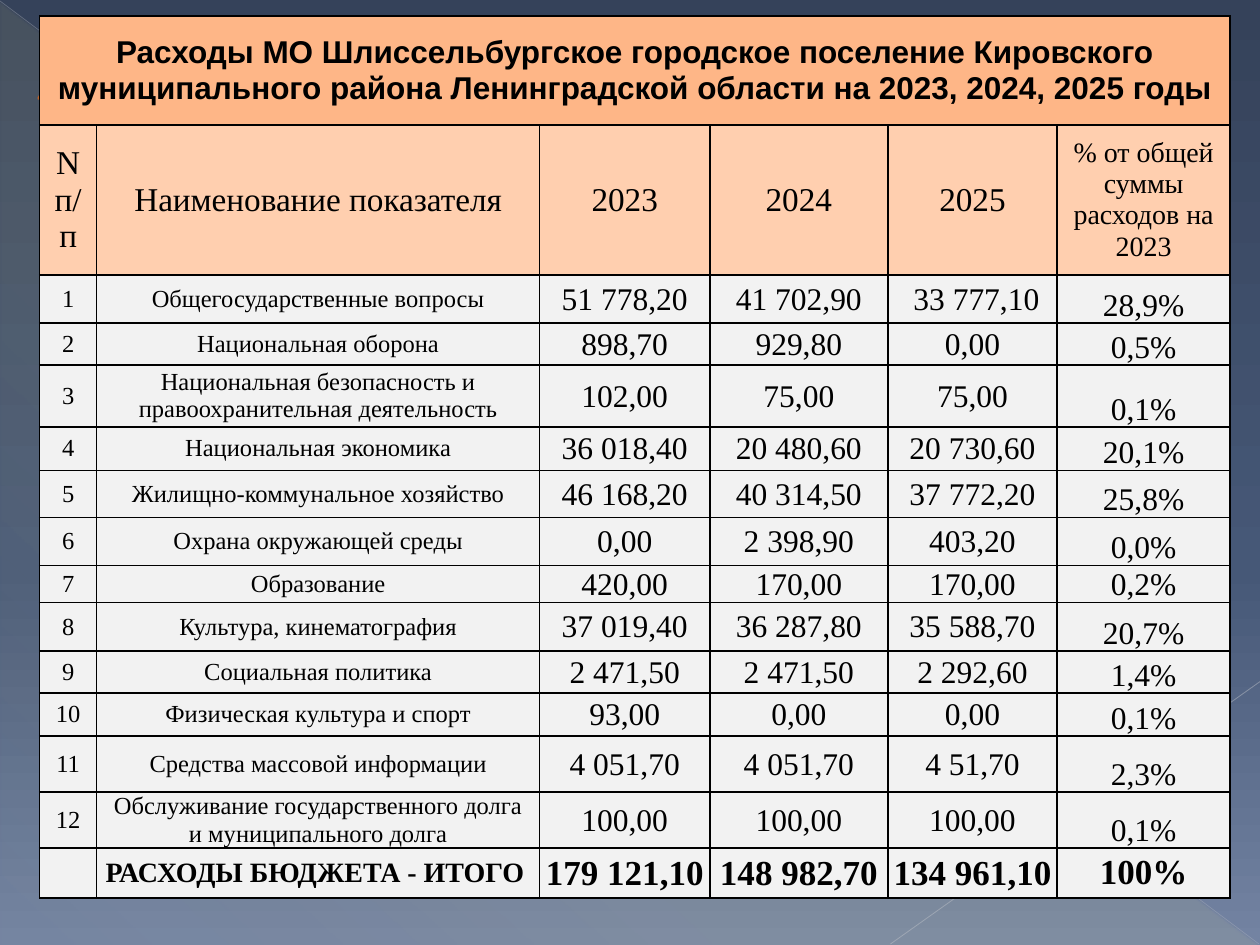
from dataclasses import dataclass

from lxml import etree
from pptx import Presentation
from pptx import util as u
from pptx.dml import color
from pptx.enum import shapes, text
from pptx.oxml import ns


@dataclass(frozen=True)
class Theme:
    heading_fill: str = "FEB687"
    column_fill: str = "FFCFAF"
    body_fill: str = "F2F2F2"
    ink: str = "000000"
    accent: str = "FE8637"
    accent_edge: str = "BC6329"
    backdrop: tuple = ((0, "35425A", 100), (60, "465877", 100), (100, "7383A2", 100))
    glow: tuple = ((0, "FFF39D", 10), (70, "FFF39D", 8), (100, "FFF39D", 1))
    heading_font: str = "Arial"
    body_font: str = "Times New Roman"
    heading_size: int = 18
    column_size: int = 19
    share_title_size: int = 16
    label_size: int = 14
    amount_size: int = 18
    total_label_size: int = 16
    total_size: int = 20


THEME = Theme()
HEADING = ("Расходы МО Шлиссельбургское городское поселение Кировского "
           "муниципального района Ленинградской области на 2023, 2024, 2025 годы")
COLUMNS = ["N п/п", "Наименование показателя", "2023", "2024", "2025",
           "% от общей суммы расходов на 2023"]
EXPENSES = [
    ("Общегосударственные вопросы", "51 778,20", "41 702,90", " 33 777,10", "28,9%"),
    ("Национальная оборона", "898,70", "929,80", "0,00", "0,5%"),
    ("Национальная безопасность и правоохранительная деятельность",
     "102,00", "75,00", "75,00", "0,1%"),
    ("Национальная экономика", "36 018,40", "20 480,60", "20 730,60", "20,1%"),
    ("Жилищно-коммунальное хозяйство", "46 168,20", "40 314,50", "37 772,20", "25,8%"),
    ("Охрана окружающей среды", "0,00", "2 398,90", "403,20", "0,0%"),
    ("Образование", "420,00", "170,00", "170,00", "0,2%"),
    ("Культура, кинематография", "37 019,40", "36 287,80", "35 588,70", "20,7%"),
    ("Социальная политика", "2 471,50", "2 471,50", "2 292,60", "1,4%"),
    ("Физическая культура и спорт", "93,00", "0,00", "0,00", "0,1%"),
    ("Средства массовой информации", "4 051,70", "4 051,70", "4 51,70", "2,3%"),
    ("Обслуживание государственного долга и муниципального долга",
     "100,00", "100,00", "100,00", "0,1%"),
]
TOTAL = ["", "РАСХОДЫ БЮДЖЕТА - ИТОГО", "179 121,10", "148 982,70", "134 961,10", "100%"]
COLUMN_WIDTHS = [1.15, 8.93, 3.43, 3.59, 3.41, 3.49]
ROW_HEIGHTS = [2.2, 3.02, 0.97, 0.85, 1.25, 0.87, 0.95, 0.97, 0.75,
               0.97, 0.85, 0.87, 1.13, 1.13, 1]

CENTER = text.PP_ALIGN.CENTER
MIDDLE = text.MSO_ANCHOR.MIDDLE
WIDE = {"margin_left": u.Cm(0.18), "margin_right": u.Cm(0.18),
        "margin_top": 0, "margin_bottom": 0}
NARROW = {"margin_left": u.Cm(0.02), "margin_right": u.Cm(0.02),
          "margin_top": u.Cm(0.02), "margin_bottom": 0}


def apply(target, values):
    for name, value in values.items():
        setattr(target, name, value)


def rgb(code):
    return color.RGBColor.from_string(code)


def add_node(parent, tag, **attributes):
    return etree.SubElement(parent, ns.qn(tag), **attributes)


def paint_gradient(fill, owner, stops, angle):
    fill.gradient()
    gradient = next(owner.iter(ns.qn("a:gradFill")))
    stop_list = gradient.find(ns.qn("a:gsLst"))
    for old_stop in list(stop_list):
        stop_list.remove(old_stop)
    for position, code, opacity in stops:
        stop = add_node(stop_list, "a:gs", pos=str(position * 1000))
        tint = add_node(stop, "a:srgbClr", val=code)
        add_node(tint, "a:alpha", val=str(opacity * 1000))
    gradient.find(ns.qn("a:lin")).set("ang", str(angle * 60000))


def add_triangle(slide, preset, left, top, width, height):
    triangle = slide.shapes.add_shape(
        preset, u.Cm(left), u.Cm(top), u.Cm(width), u.Cm(height))
    triangle.shadow.inherit = False
    return triangle


def add_ray(slide, start, end, code, width, opacity):
    ray = slide.shapes.add_connector(
        shapes.MSO_CONNECTOR.STRAIGHT, *map(u.Cm, start + end))
    apply(ray.line, {"width": u.Pt(width)})
    ray.line.color.rgb = rgb(code)
    tint = next(ray.line._ln.iter(ns.qn("a:srgbClr")))
    add_node(tint, "a:alpha", val=str(opacity * 1000))
    add_node(ray._element.spPr, "a:effectLst")


def add_backdrop(slide):
    paint_gradient(slide.background.fill, slide._element, THEME.backdrop, 90)
    glow = add_triangle(slide, shapes.MSO_SHAPE.RIGHT_TRIANGLE, 0.02, 0.05, 25.35, 19)
    paint_gradient(glow.fill, glow._element, THEME.glow, 133)
    glow.line.fill.background()
    add_ray(slide, (0, 0.02), (25.38, 19.03), "BABDC4", 0.39, 35)
    add_ray(slide, (25.4, 13.74), (17.95, 19.03), "C1C4CA", 0.47, 45)
    marker = add_triangle(slide, shapes.MSO_SHAPE.ISOSCELES_TRIANGLE, 0.79, 0.58, 1.78, 1.4)
    marker.fill.solid()
    marker.fill.fore_color.rgb = rgb(THEME.accent)
    marker.line.color.rgb = rgb(THEME.accent_edge)
    marker.line.width = u.Pt(2)


def frame_cell(cell, fill):
    properties = cell._tc.get_or_add_tcPr()
    for side in "LRTB":
        edge = add_node(properties, f"a:ln{side}", w=str(u.Pt(1)))
        add_node(add_node(edge, "a:solidFill"), "a:srgbClr", val=THEME.ink)
    cell.fill.solid()
    cell.fill.fore_color.rgb = rgb(fill)


def write_cell(cell, wording, size, margins=WIDE, bold=False, font=THEME.body_font,
               align=CENTER, anchor=MIDDLE):
    apply(cell, {**margins, "vertical_anchor": anchor, "text": wording})
    paragraph = cell.text_frame.paragraphs[0]
    paragraph.alignment = align
    lettering = paragraph.runs[0].font if wording else paragraph.font
    apply(lettering, {"name": font, "size": u.Pt(size), "bold": bold})
    lettering.color.rgb = rgb(THEME.ink)


def fill_titles(budget):
    budget.cell(0, 0).merge(budget.cell(0, len(COLUMNS) - 1))
    write_cell(budget.cell(0, 0), HEADING, THEME.heading_size, bold=True,
               font=THEME.heading_font)
    for column, title in enumerate(COLUMNS):
        is_share = column == len(COLUMNS) - 1
        size = THEME.share_title_size if is_share else THEME.column_size
        write_cell(budget.cell(1, column), title, size)


def fill_expenses(budget):
    for number, (indicator, *amounts, share) in enumerate(EXPENSES, 1):
        row = budget.rows[number + 1].cells
        number_cell, indicator_cell, *amount_cells, share_cell = row
        write_cell(number_cell, str(number), THEME.label_size)
        write_cell(indicator_cell, indicator, THEME.label_size)
        for cell, amount in zip(amount_cells, amounts):
            write_cell(cell, amount, THEME.amount_size, NARROW)
        write_cell(share_cell, share, THEME.amount_size, NARROW,
                   anchor=text.MSO_ANCHOR.BOTTOM)


def fill_total(budget):
    for column, wording in enumerate(TOTAL):
        is_label = column < 2
        write_cell(budget.cell(len(ROW_HEIGHTS) - 1, column), wording,
                   THEME.total_label_size if is_label else THEME.total_size,
                   NARROW if 2 <= column <= 4 else WIDE, bold=True,
                   align=text.PP_ALIGN.LEFT if is_label else CENTER)


def add_budget(slide):
    budget = slide.shapes.add_table(
        len(ROW_HEIGHTS), len(COLUMN_WIDTHS), u.Cm(0.8), u.Cm(0.32),
        u.Cm(sum(COLUMN_WIDTHS)), u.Cm(sum(ROW_HEIGHTS))).table
    apply(budget, {"first_row": False, "horz_banding": False})
    for column, width in zip(budget.columns, COLUMN_WIDTHS):
        column.width = u.Cm(width)
    title_fills = [THEME.heading_fill, THEME.column_fill]
    fills = title_fills + [THEME.body_fill] * (len(ROW_HEIGHTS) - len(title_fills))
    for row, height, fill in zip(budget.rows, ROW_HEIGHTS, fills):
        row.height = u.Cm(height)
        for cell in row.cells:
            frame_cell(cell, fill)
    fill_titles(budget)
    fill_expenses(budget)
    fill_total(budget)


def main():
    deck = Presentation()
    apply(deck, {"slide_width": u.Cm(25.4), "slide_height": u.Cm(19.05)})
    slide = deck.slides.add_slide(deck.slide_layouts[6])
    add_backdrop(slide)
    add_budget(slide)
    deck.save("out.pptx")


if __name__ == "__main__":
    main()
